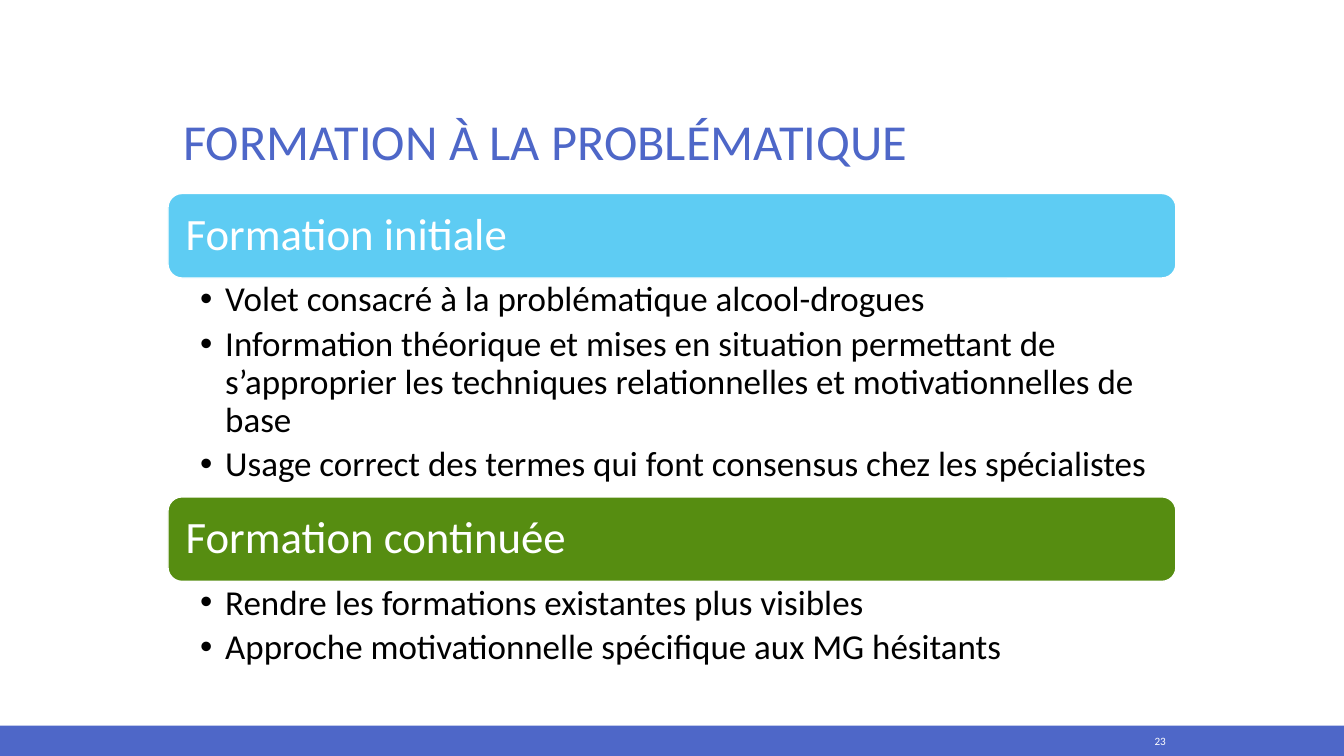
"""Build the slide on initial and continuing training."""
from pptx import Presentation
from pptx.dml.color import RGBColor
from pptx.enum.shapes import MSO_SHAPE as SHAPE
from pptx.enum.text import MSO_ANCHOR as ANCHOR, MSO_AUTO_SIZE as AUTO, PP_ALIGN as ALIGN
from pptx.util import Pt

INDIGO = RGBColor(0x4E, 0x67, 0xC8)
SKY = RGBColor(0x5E, 0xCC, 0xF3)
GREEN = RGBColor(0x56, 0x8D, 0x11)
WHITE = RGBColor(0xFF, 0xFF, 0xFF)
BLACK = RGBColor(0, 0, 0)

TITLE = "FORMATION À LA PROBLÉMATIQUE"
PAGE = "23"
SECTIONS = [
    ("Formation initiale", SKY, 156.3, [
        "Volet consacré à la problématique alcool-drogues",
        "Information théorique et mises en situation permettant de "
        "s’approprier les techniques relationnelles et motivationnelles de base",
        "Usage correct des termes qui font consensus chez les spécialistes",
    ]),
    ("Formation continuée", GREEN, 67.7, [
        "Rendre les formations existantes plus visibles",
        "Approche motivationnelle spécifique aux MG hésitants",
    ]),
]

WIDTH, HEIGHT = 960, 540
LEFT, BODY_W = 120, 720
TOP, HEAD_H, BAR_H = 138.2, 60.4, 21.6

TITLE_FMT = {"line_spacing": 0.9, "alignment": ALIGN.LEFT}
HEAD_FMT = {"line_spacing": 0.9, "alignment": ALIGN.LEFT}
LIST_FMT = {"line_spacing": 0.9, "alignment": ALIGN.LEFT,
            "space_before": Pt(0), "space_after": Pt(5)}
PAGE_FMT = {"alignment": ALIGN.RIGHT}


def set_all(obj, values):
    for name, value in values.items():
        setattr(obj, name, value)


def place(sp, left, top, width, height):
    set_all(sp, {"left": Pt(left), "top": Pt(top),
                 "width": Pt(width), "height": Pt(height)})


def paint(sp, fill, line=None):
    sp.shadow.inherit = False
    sp.fill.solid()
    sp.fill.fore_color.rgb = fill
    if line is None:
        sp.line.fill.background()
    else:
        sp.line.color.rgb = line
        sp.line.width = Pt(1)


def write(sp, lines, size, color, fmt, anchor, insets=(7.2, 3.6, 7.2, 3.6),
          margin=0, indent=0):
    tf = sp.text_frame
    sides = ("margin_left", "margin_top", "margin_right", "margin_bottom")
    set_all(tf, {"word_wrap": True, "auto_size": AUTO.NONE, "vertical_anchor": anchor})
    set_all(tf, {side: Pt(inset) for side, inset in zip(sides, insets)})
    for i, line in enumerate(lines):
        p = tf.add_paragraph() if i else tf.paragraphs[0]
        set_all(p, fmt)
        pPr = p._p.get_or_add_pPr()
        pPr.set("marL", str(Pt(margin)))
        pPr.set("indent", str(Pt(indent)))
        r = p.add_run()
        r.text = line
        set_all(r.font, {"name": "Calibri", "size": Pt(size)})
        r.font.color.rgb = color


prs = Presentation()
set_all(prs, {"slide_width": Pt(WIDTH), "slide_height": Pt(HEIGHT)})
s = prs.slides.add_slide(prs.slide_layouts[3])

bar = s.shapes.add_shape(SHAPE.RECTANGLE, 0, Pt(HEIGHT - BAR_H), Pt(WIDTH), Pt(BAR_H))
paint(bar, INDIGO)

title = s.shapes.title
place(title, LEFT, 36, BODY_W, 90)
write(title, [TITLE], 36, INDIGO, TITLE_FMT, ANCHOR.BOTTOM, margin=3.6)

top = TOP
for idx, (heading, color, list_h, items) in enumerate(SECTIONS, 1):
    head = s.shapes.add_shape(SHAPE.ROUNDED_RECTANGLE, Pt(LEFT), Pt(top),
                              Pt(BODY_W), Pt(HEAD_H))
    paint(head, color, WHITE)
    write(head, [heading], 32, WHITE, HEAD_FMT, ANCHOR.MIDDLE, (9.6,) * 4)
    body = s.placeholders[idx]
    place(body, LEFT, top + HEAD_H, BODY_W, list_h)
    write(body, items, 25, BLACK, LIST_FMT, ANCHOR.TOP, (22.9, 2.5, 17.8, 2.5), 18, -18)
    top += HEAD_H + list_h

page = s.shapes.add_textbox(Pt(779), Pt(520), Pt(61), Pt(18))
write(page, [PAGE], 8, WHITE, PAGE_FMT, ANCHOR.MIDDLE)

prs.save("out.pptx")
